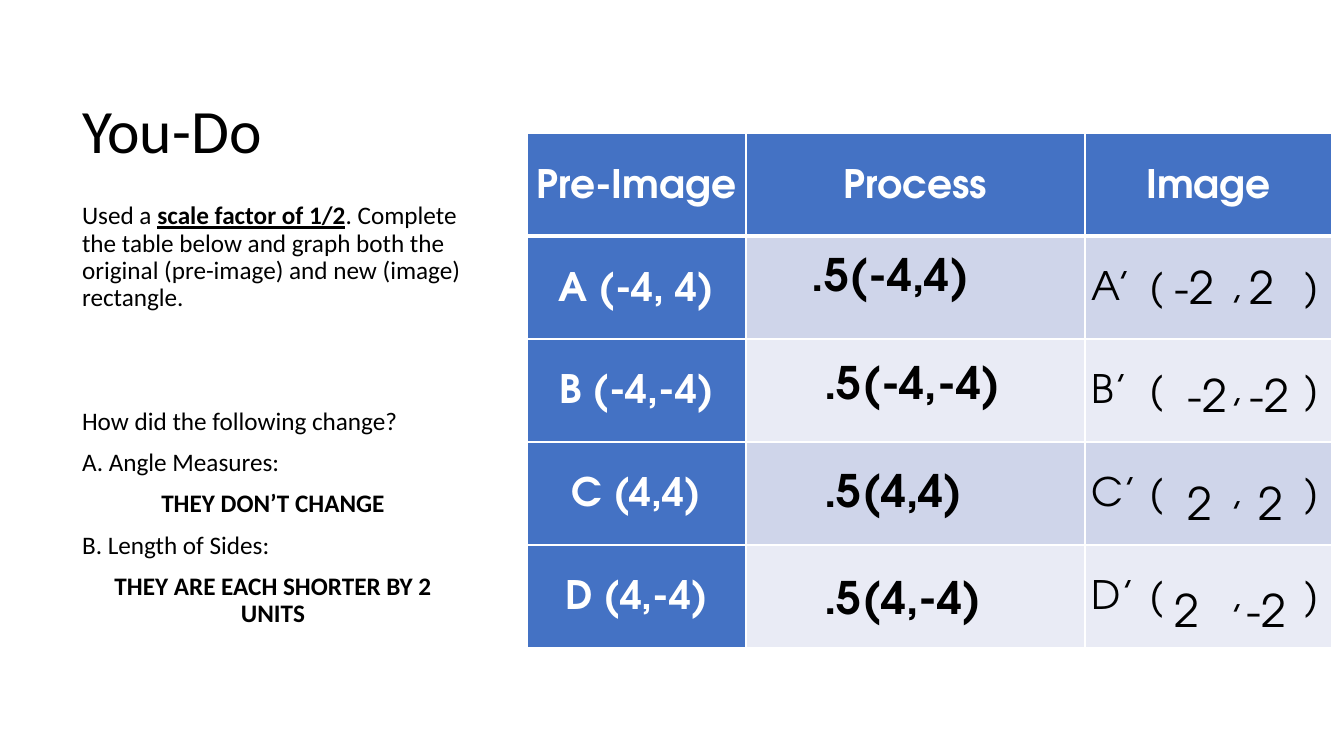
from lxml import etree
from pptx import Presentation
from pptx.dml.color import RGBColor
from pptx.enum.text import MSO_ANCHOR, MSO_AUTO_SIZE, PP_ALIGN
from pptx.oxml.ns import qn
from pptx.util import Pt

LEFT, CENTER = PP_ALIGN.LEFT, PP_ALIGN.CENTER
TOP, MIDDLE = MSO_ANCHOR.TOP, MSO_ANCHOR.MIDDLE
FIXED, GROW = MSO_AUTO_SIZE.NONE, MSO_AUTO_SIZE.SHAPE_TO_FIT_TEXT
PX = 9071.43

THEME = {
    "text_font": "Calibri", "math_font": "TeX Gyre Adventor",
    "black": "000000", "white": "FFFFFF", "header": "4472C4",
    "bands": ["CFD5EA", "E9EBF5"],
    "title": 44, "body": 18, "table": 28, "answer": 32,
}


def px(*lengths):
    return [round(length * PX) for length in lengths]


def write(paragraph, text, font, size, color="black", bold=False, underline=False, tabs=()):
    run = paragraph.add_run()
    run.text = text
    run.font.name = THEME[font]
    run.font.size = Pt(THEME[size])
    run.font.bold = bold
    run.font.underline = underline
    run.font.color.rgb = RGBColor.from_string(THEME[color])
    if tabs:
        stops = etree.SubElement(paragraph._p.get_or_add_pPr(), qn("a:tabLst"))
        for position in px(*tabs):
            etree.SubElement(stops, qn("a:tab"), pos=str(position), algn="l")


prs = Presentation()
prs.slide_width, prs.slide_height = px(1344, 756)
slide = prs.slides.add_slide(prs.slide_layouts[1])

title = slide.shapes.title
title.left, title.top, title.width, title.height = px(72, 70, 565, 128)
title.text_frame.vertical_anchor = MIDDLE
title.text_frame.auto_size = FIXED
heading = title.text_frame.paragraphs[0]
heading.alignment = LEFT
heading.line_spacing = 0.9
write(heading, "You-Do", "text_font", "title")

questions = slide.placeholders[1]
questions.left, questions.top, questions.width, questions.height = px(72, 198, 402, 489)
questions.text_frame.vertical_anchor = TOP
questions.text_frame.auto_size = FIXED
question_lines = [
    (LEFT, 10, [
        ("Used a ", False, False),
        ("scale factor of 1/2", True, True),
        (". Complete the table below and graph both the original (pre-image) "
         "and new (image) rectangle.", False, False),
    ]),
    (LEFT, 69, [("How did the following change?", False, False)]),
    (LEFT, 10, [("A. Angle Measures:", False, False)]),
    (CENTER, 10, [("THEY DON’T CHANGE", True, False)]),
    (LEFT, 10, [("B. Length of Sides:", False, False)]),
    (CENTER, 10, [("THEY ARE EACH SHORTER BY 2 UNITS", True, False)]),
]
for index, (alignment, gap, pieces) in enumerate(question_lines):
    frame = questions.text_frame
    line = frame.add_paragraph() if index else frame.paragraphs[0]
    line.alignment = alignment
    line.line_spacing = 0.9
    line.space_before = Pt(gap)
    properties = line._p.get_or_add_pPr()
    properties.set("marL", "0")
    properties.set("indent", "0")
    etree.SubElement(properties, qn("a:buNone"))
    for text, bold, underline in pieces:
        write(line, text, "text_font", "body", bold=bold, underline=underline)

table_rows = [
    ("Pre-Image", "Process", "Image"),
    ("A (-4, 4)", "", "A’\t(\t,\t)"),
    ("B (-4,-4)", "", "B’\t(\t,\t)"),
    ("C (4,4)", "", "C’\t(\t,\t)"),
    ("D (4,-4)", "", "D’\t(\t,\t)"),
]
column_widths = px(219, 339, 247)
table = slide.shapes.add_table(5, 3, *px(527, 133, 805, 516)).table
for column, width in zip(table.columns, column_widths):
    column.width = width
for row_index, row_texts in enumerate(table_rows):
    table.rows[row_index].height = px(103)[0]
    for column_index, text in enumerate(row_texts):
        cell = table.cell(row_index, column_index)
        is_header = row_index == 0 or column_index == 0
        fill = THEME["header"] if is_header else THEME["bands"][(row_index - 1) % 2]
        for position, side in enumerate(("lnL", "lnR", "lnT", "lnB")):
            thick = (row_index, side) in ((0, "lnB"), (1, "lnT"))
            border = etree.Element(qn("a:" + side), w=str(Pt(3 if thick else 1)))
            solid = etree.SubElement(border, qn("a:solidFill"))
            etree.SubElement(solid, qn("a:srgbClr"), val=THEME["white"])
            cell._tc.get_or_add_tcPr().insert(position, border)
        cell.fill.solid()
        cell.fill.fore_color.rgb = RGBColor.from_string(fill)
        cell.vertical_anchor = MIDDLE
        cell.margin_left, cell.margin_right, cell.margin_top, cell.margin_bottom = px(7, 7, 0, 0)
        if text:
            label = cell.text_frame.paragraphs[0]
            label.alignment = CENTER if is_header else LEFT
            label.line_spacing = 1.15
            write(label, text, "math_font", "table", "white" if is_header else "black",
                  bold=is_header, tabs=() if is_header else (58, 139, 213))

process_steps = [(".5(-4,4)", ()), (" .5(-4,-4)", ()), (" .5(4,4)", ()), (" .5(4,-4)", ())]
image_points = [("-2\t2", (75,)), (" -2\t-2", (75,)), (" 2\t2", (84,)), ("2\t-2", (72,))]
for bounds, answers, bold in [
    ((802, 242, 232, 390), process_steps, True),
    ((1165, 255, 145, 390), image_points, False),
]:
    frame = slide.shapes.add_textbox(*px(*bounds)).text_frame
    frame.word_wrap = True
    frame.auto_size = GROW
    for index, (text, tabs) in enumerate(answers):
        answer = frame.add_paragraph() if index else frame.paragraphs[0]
        answer.space_before = Pt(38.5 if index else 0)
        write(answer, text, "math_font", "answer", bold=bold, tabs=tabs)

prs.save("out.pptx")
